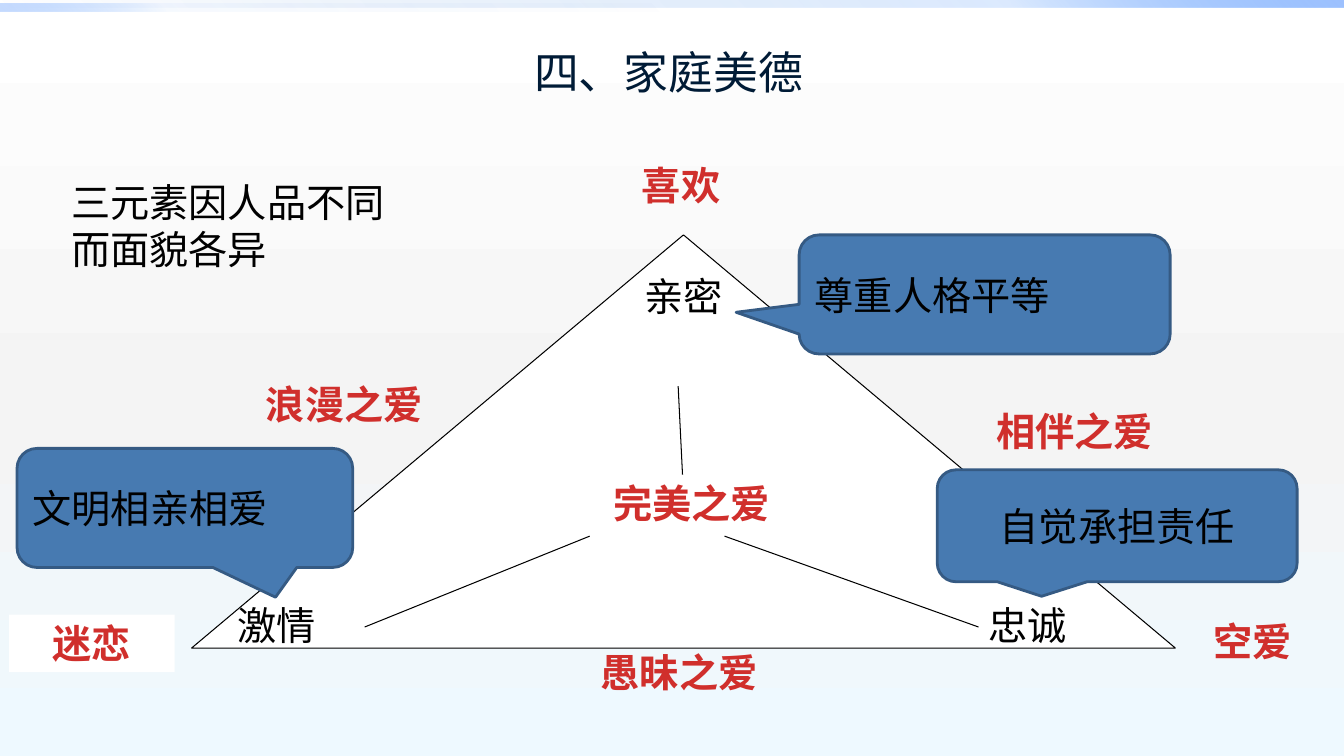
from lxml import etree
from pptx import Presentation
from pptx.dml.color import RGBColor
from pptx.enum import shapes, text
from pptx.oxml.ns import qn
from pptx.util import Cm, Pt

COLOURS = {
    "title": "001B36", "ink": "000000", "love": "D02F2C", "white": "FFFFFF",
    "callout": "477AB1", "callout_edge": "355A83",
}
BACKGROUND = [(0, "FFFFFF", 100), (55, "F4F4F4", 100), (100, "EEF9FF", 100)]
BARS = [
    ((0, 0, 33.87, 0.2), 315, [(0, "0058B7", 0), (75, "4F95FF", 20), (100, "9EC2FF", 100)]),
    ((0, 0.1, 16.93, 0.2), 135, [(0, "0058B7", 0), (75, "4F95FF", 5), (100, "9EC2FF", 60)]),
]
TITLE = "四、家庭美德"
TITLE_AREA = (6.27, 0.91, 21.16, 1.8)
TRIANGLE_AREA = (4.83, 5.92, 24.79, 10.41)
LABEL_HEIGHT = 1.45
ELEMENTS = [
    ("亲密", 16, 6.73, 3.53),
    ("忠诚", 24.66, 15.04, 4.14),
    ("激情", 5.74, 15.04, 5.87),
]
LOVES = [
    ("喜欢", 14.83, 3.94, 4.67),
    ("相伴之爱", 22.73, 10.13, 8.71),
    ("浪漫之爱", 4.93, 9.45, 7.49),
    ("愚昧之爱", 13.18, 16.21, 7.87),
    ("完美之爱", 13.08, 11.96, 8.71),
    ("迷恋", 0.23, 15.49, 4.17),
    ("空爱", 29.24, 15.44, 4.67),
]
FILLED_LOVE = "迷恋"
LEFT, CENTRE = text.PP_ALIGN.LEFT, text.PP_ALIGN.CENTER
CALLOUTS = [
    ("尊重人格平等", (20.14, 5.92, 9.35, 3), (-0.67, 0.15), LEFT),
    ("文明相亲相爱", (0.43, 11.3, 8.46, 3), (0.27, 0.75), LEFT),
    ("自觉承担责任", (23.62, 11.84, 9.07, 2.82), (-0.21, 0.63), CENTRE),
]
SPOKES = [
    (18.26, 13.51, 24.66, 15.8),
    (14.86, 13.51, 9.19, 15.8),
    (17.09, 9.73, 17.2, 11.96),
]
NOTE = ["三元素因人品不同", "而面貌各异"]
NOTE_AREA = (1.55, 4.37, 11.94, 2.64)


def rgb(name):
    return RGBColor.from_string(COLOURS[name])


def lengths(values):
    return [Cm(value) for value in values]


def set_gradient(fill, element, stops, angle):
    fill.gradient()
    gradient = element.find(".//" + qn("a:gradFill"))
    stop_list = gradient.find(qn("a:gsLst"))
    for stop in list(stop_list):
        stop_list.remove(stop)
    for position, colour, opacity in stops:
        stop = etree.SubElement(stop_list, qn("a:gs"), pos=str(position * 1000))
        shade = etree.SubElement(stop, qn("a:srgbClr"), val=colour)
        if opacity < 100:
            etree.SubElement(shade, qn("a:alpha"), val=str(opacity * 1000))
    gradient.find(qn("a:lin")).set("ang", str(angle * 60000))


def write(box, lines, align, name, colour="ink", size=28, bold=False,
          anchor=text.MSO_ANCHOR.TOP):
    frame = box.text_frame
    frame.word_wrap = True
    frame.vertical_anchor = anchor
    frame.text = "\n".join(lines)
    for para in frame.paragraphs:
        para.alignment = align
        for span in para.runs:
            for key, value in {"name": name, "size": Pt(size), "bold": bold}.items():
                setattr(span.font, key, value)
            span.font.color.rgb = rgb(colour)


def add_shape(page, kind, area, fill=None, edge=None, width=0.75):
    shape = page.shapes.add_shape(kind, *lengths(area))
    shape.shadow.inherit = False
    if fill:
        shape.fill.solid()
        shape.fill.fore_color.rgb = rgb(fill)
    if edge:
        shape.line.color.rgb = rgb(edge)
        shape.line.width = Pt(width)
    else:
        shape.line.fill.background()
    return shape


def add_label(page, label, left, top, width, **style):
    box = page.shapes.add_textbox(*lengths((left, top, width, LABEL_HEIGHT)))
    write(box, [label], **style)
    return box


def main():
    deck = Presentation()
    deck.slide_width, deck.slide_height = Cm(33.87), Cm(19.05)
    page = deck.slides.add_slide(deck.slide_layouts[5])
    set_gradient(page.background.fill, page.background._cSld, BACKGROUND, 90)

    for area, angle, stops in BARS:
        bar = add_shape(page, shapes.MSO_SHAPE.RECTANGLE, area)
        set_gradient(bar.fill, bar._element, stops, angle)

    title = page.shapes.title
    title.left, title.top, title.width, title.height = lengths(TITLE_AREA)
    write(title, [TITLE], CENTRE, "Arial", "title", 32, anchor=text.MSO_ANCHOR.MIDDLE)

    add_shape(page, shapes.MSO_SHAPE.ISOSCELES_TRIANGLE, TRIANGLE_AREA, "white", "ink")
    for element in ELEMENTS:
        add_label(page, *element, align=LEFT, name="Times New Roman")

    for label, area, tip, align in CALLOUTS:
        callout = add_shape(page, shapes.MSO_SHAPE.ROUNDED_RECTANGULAR_CALLOUT, area,
                            "callout", "callout_edge", 2)
        callout.adjustments[0], callout.adjustments[1] = tip
        write(callout, [label], align, "Cambria", anchor=text.MSO_ANCHOR.MIDDLE)

    for spoke in SPOKES:
        line = page.shapes.add_connector(shapes.MSO_CONNECTOR.STRAIGHT, *lengths(spoke))
        line.line.color.rgb = rgb("ink")
        line.line.width = Pt(0.75)
        etree.SubElement(line._element.spPr, qn("a:effectLst"))

    for love in LOVES:
        box = add_label(page, *love, align=CENTRE, name="Arial", colour="love", bold=True)
        if love[0] == FILLED_LOVE:
            box.fill.solid()
            box.fill.fore_color.rgb = rgb("white")

    note = page.shapes.add_textbox(*lengths(NOTE_AREA))
    write(note, NOTE, LEFT, "Noto Sans CJK SC")
    deck.save("out.pptx")


if __name__ == "__main__":
    main()
